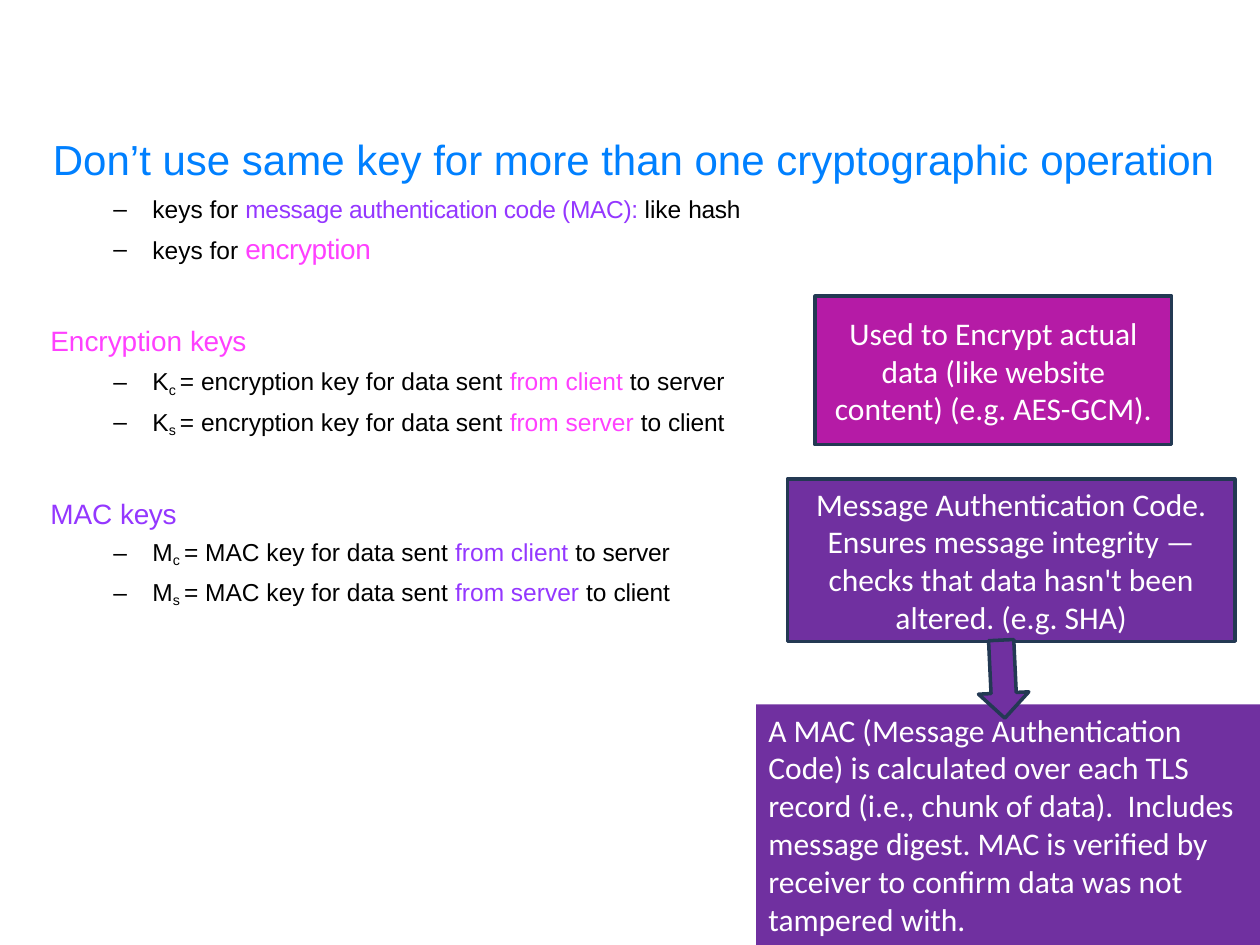
from dataclasses import dataclass

from lxml.etree import SubElement
from pptx import Presentation
from pptx.dml.color import RGBColor
from pptx.enum.shapes import MSO_SHAPE
from pptx.enum.text import MSO_ANCHOR, MSO_AUTO_SIZE, PP_ALIGN
from pptx.oxml.ns import qn
from pptx.util import Inches, Pt


@dataclass(frozen=True)
class Theme:
    heading_font: str = "Arial"
    callout_font: str = "Calibri"
    title: str = "0080FF"
    ink: str = "000000"
    white: str = "FFFFFF"
    mac: str = "9437FF"
    encryption: str = "FF40FF"
    encryption_fill: str = "B51BA6"
    mac_fill: str = "7030A0"
    outline: str = "233953"
    title_size: int = 24
    heading_size: int = 16
    item_size: int = 14
    callout_size: int = 18


theme = Theme()


def write(paragraph, text, font=theme.heading_font, size=theme.item_size,
          color=theme.ink, spacing=0, baseline=0):
    run = paragraph.add_run()
    run.text = text
    run.font.name = font
    run.font.size = Pt(size)
    run.font.color.rgb = RGBColor.from_string(color)
    properties = run.font._element
    if spacing:
        properties.set("spc", str(round(spacing * 100)))
    if baseline:
        properties.set("baseline", str(baseline * 1000))


def add_block(kind, box, fill, outlined=True):
    block = slide.shapes.add_shape(kind, *map(Inches, box))
    block.shadow.inherit = False
    block.fill.solid()
    block.fill.fore_color.rgb = RGBColor.from_string(fill)
    if outlined:
        block.line.color.rgb = RGBColor.from_string(theme.outline)
        block.line.width = Pt(2)
    else:
        block.line.fill.background()
    return block


presentation = Presentation()
presentation.slide_width = Inches(10)
presentation.slide_height = Inches(7.5)
slide = presentation.slides.add_slide(presentation.slide_layouts[1])
title, key_list = slide.placeholders

for holder, box, top_inset in (
    (title, (0.41, 1.05, 9.26, 0.43), 0.01),
    (key_list, (0.33, 1.46, 9.26, 3.35), 0.08),
):
    holder.left, holder.top, holder.width, holder.height = map(Inches, box)
    frame = holder.text_frame
    frame.word_wrap = True
    frame.auto_size = MSO_AUTO_SIZE.NONE
    frame.vertical_anchor = MSO_ANCHOR.TOP
    frame.margin_left = frame.margin_right = frame.margin_bottom = 0
    frame.margin_top = Inches(top_inset)

headline = title.text_frame.paragraphs[0]
headline.alignment = PP_ALIGN.LEFT
headline.space_before = Pt(1)
headline._p.get_or_add_pPr().set("marL", str(Inches(0.01)))
write(headline, "Don’t use same key for more than one cryptographic ",
      size=theme.title_size, color=theme.title)
write(headline, "operation", size=theme.title_size, color=theme.title, spacing=-0.1)

mac_style = {"color": theme.mac}
encryption_style = {"color": theme.encryption}
heading_style = {"size": theme.heading_size}
tight = {"spacing": -0.2}

lines = [
    (5.8, True, [("keys for ", {}),
                 ("message authentication code (MAC): ", mac_style | tight),
                 ("like ", {}), ("hash", tight)]),
    (4.8, True, [("keys for ", {}),
                 ("encryption", encryption_style | heading_style | tight)]),
]
for name, letter, operation, accent, gaps in (
    ("Encryption ", "K", "encryption", encryption_style, (33.4, 5.2, 5)),
    ("MAC ", "M", "MAC", mac_style, (33.2, 4.2, 5)),
):
    heading_gap, *item_gaps = gaps
    lines.append((heading_gap, False, [(name, accent | heading_style),
                                       ("keys", accent | heading_style | tight)]))
    for gap, sender, receiver in zip(item_gaps, ("client", "server"), ("server", "client")):
        lines.append((gap, True, [
            (letter, {}),
            (f"{sender[0]} ", {"baseline": -17}),
            (f"= {operation} key for data sent ", {}),
            (f"from {sender} ", accent),
            ("to ", {}),
            (receiver, {"spacing": -0.1}),
        ]))

for index, (gap, bulleted, runs) in enumerate(lines):
    frame = key_list.text_frame
    line = frame.add_paragraph() if index else frame.paragraphs[0]
    line.space_before = Pt(gap)
    layout = line._p.get_or_add_pPr()
    layout.set("marL", str(Inches(0.88 if bulleted else 0.07)))
    layout.set("indent", str(Inches(-0.31 if bulleted else 0)))
    if bulleted:
        SubElement(layout, qn("a:buChar")).set("char", "–")
    else:
        SubElement(layout, qn("a:buNone"))
    for text, style in runs:
        write(line, text, **style)

callouts = (
    ("Used to Encrypt actual data (like website content) (e.g. AES-GCM).",
     (6.47, 2.35, 2.83, 1.18), theme.encryption_fill, True),
    ("Message Authentication Code. Ensures message integrity — checks that data "
     "hasn't been altered. (e.g. SHA)",
     (6.25, 3.8, 3.55, 1.29), theme.mac_fill, True),
    ("A MAC (Message Authentication Code) is calculated over each TLS record "
     "(i.e., chunk of data).  Includes message digest. MAC is verified by receiver "
     "to confirm data was not tampered with.",
     (6, 5.59, 4.08, 1.92), theme.mac_fill, False),
)
for text, box, fill, outlined in callouts:
    frame = add_block(MSO_SHAPE.RECTANGLE, box, fill, outlined).text_frame
    frame.word_wrap = True
    frame.vertical_anchor = MSO_ANCHOR.MIDDLE if outlined else MSO_ANCHOR.TOP
    message = frame.paragraphs[0]
    message.alignment = PP_ALIGN.CENTER if outlined else PP_ALIGN.LEFT
    write(message, text, font=theme.callout_font, size=theme.callout_size,
          color=theme.white)

mac_arrow = add_block(MSO_SHAPE.UP_ARROW, (7.76, 5.08, 0.4, 0.62), theme.mac_fill)
mac_arrow.rotation = 177.3

presentation.save("out.pptx")
